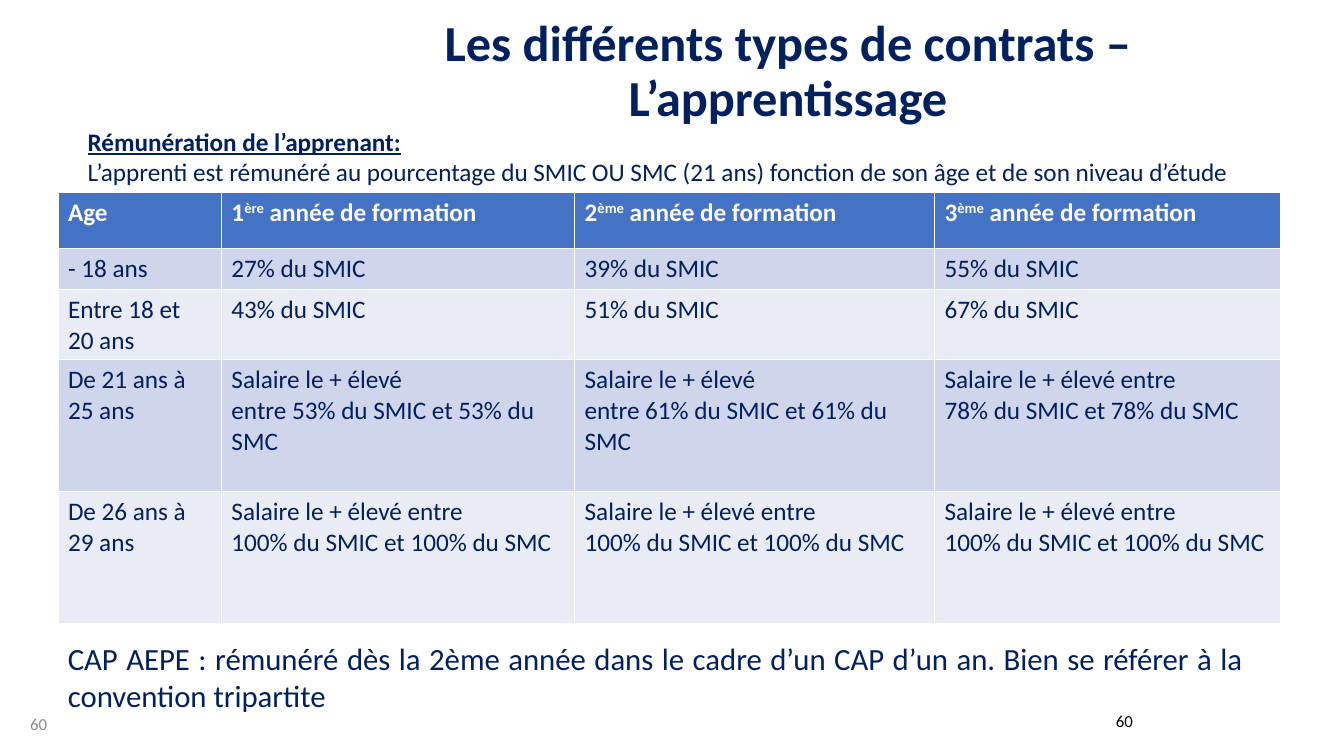
from pptx import Presentation
from pptx.dml.color import RGBColor
from pptx.enum.text import MSO_ANCHOR, MSO_AUTO_SIZE, PP_ALIGN
from pptx.util import Cm, Pt

# Content
TITLE = "Les différents types de contrats – L’apprentissage"
INTRO = [
    "Rémunération de l’apprenant:",
    "L’apprenti est rémunéré au pourcentage du SMIC OU SMC (21 ans) "
    "fonction de son âge et de son niveau d’étude",
]
NOTE = ("CAP AEPE : rémunéré dès la 2ème année dans le cadre d’un CAP d’un an. "
        "Bien se référer à la convention tripartite")
PAGE = "60"
YEARS = [("1", "ère"), ("2", "ème"), ("3", "ème")]
FULL_PAY = "Salaire le + élevé entre\n100% du SMIC et 100% du SMC"
PAY = [
    ("- 18 ans", "27% du SMIC", "39% du SMIC", "55% du SMIC"),
    ("Entre 18 et 20 ans", "43% du SMIC", "51% du SMIC", "67% du SMIC"),
    ("De 21 ans à 25 ans",
     "Salaire le + élevé\nentre 53% du SMIC et 53% du SMC",
     "Salaire le + élevé\nentre 61% du SMIC et 61% du SMC",
     "Salaire le + élevé entre\n78% du SMIC et 78% du SMC"),
    ("De 26 ans à 29 ans", FULL_PAY, FULL_PAY, FULL_PAY),
]
COL_WIDTHS = [4.12, 8.9, 9.07, 8.71]
ROW_HEIGHTS = [1.42, 1.03, 1.75, 3.31, 3.33]
COLORS = {"navy": "002060", "white": "FFFFFF", "black": "000000", "gray": "8C8C8C",
          "header": "4472C4", "odd": "CFD5EA", "even": "E9EBF5"}
FONT = "Calibri"


def rgb(name):
    return RGBColor.from_string(COLORS[name])


def style(p, size, color, align=None, bold=False):
    p.alignment = align
    p.font.name = FONT
    p.font.size = Pt(size)
    p.font.bold = bold
    p.font.color.rgb = rgb(color)


def add_text(s, box, lines, size, color, align, anchor=MSO_ANCHOR.TOP):
    tf = s.shapes.add_textbox(*map(Cm, box)).text_frame
    tf.word_wrap = True
    tf.vertical_anchor = anchor
    tf.text = "\n".join(lines)
    for p in tf.paragraphs:
        style(p, size, color, align)
    return tf


prs = Presentation()
prs.slide_width, prs.slide_height = Cm(33.87), Cm(19.05)
s = prs.slides.add_slide(prs.slide_layouts[5])

# Title
title = s.shapes.title
title.left, title.top, title.width, title.height = map(Cm, (7.21, 1.07, 25.3, 1.52))
tf = title.text_frame
tf.text = TITLE
tf.word_wrap = True
tf.auto_size = MSO_AUTO_SIZE.NONE
tf.vertical_anchor = MSO_ANCHOR.MIDDLE
style(tf.paragraphs[0], 36, "navy", PP_ALIGN.CENTER, bold=True)
tf.paragraphs[0].line_spacing = 0.9

# Introduction
tf = add_text(s, (1.96, 3.05, 29.97, 1.8), INTRO, 18, "navy", PP_ALIGN.JUSTIFY)
tf.paragraphs[0].font.bold = True
tf.paragraphs[0].font.underline = True

# Pay table
table = s.shapes.add_table(len(ROW_HEIGHTS), len(COL_WIDTHS), Cm(1.46), Cm(4.84),
                           Cm(sum(COL_WIDTHS)), Cm(sum(ROW_HEIGHTS))).table
for col, width in zip(table.columns, COL_WIDTHS):
    col.width = Cm(width)
for row, height in zip(table.rows, ROW_HEIGHTS):
    row.height = Cm(height)

table.cell(0, 0).text = "Age"
for j, (number, suffix) in enumerate(YEARS, 1):
    p = table.cell(0, j).text_frame.paragraphs[0]
    for text in (number, suffix, " année de formation"):
        r = p.add_run()
        r.text = text
        if text == suffix:
            r._r.get_or_add_rPr().set("baseline", "30000")
for i, values in enumerate(PAY, 1):
    for j, value in enumerate(values):
        table.cell(i, j).text = value

for i, row in enumerate(table.rows):
    fill = "header" if i == 0 else "odd" if i % 2 else "even"
    for cell in row.cells:
        cell.fill.solid()
        cell.fill.fore_color.rgb = rgb(fill)
        for p in cell.text_frame.paragraphs:
            style(p, 18, "navy" if i else "white", bold=i == 0)

# Closing note and page numbers
add_text(s, (1.46, 16, 30.12, 2.13), [NOTE], 22, "navy", PP_ALIGN.JUSTIFY)
for box, color in [((27.2, 17.65, 1.6, 1.02), "black"), ((0.2, 17.73, 1.24, 1.02), "gray")]:
    add_text(s, box, [PAGE], 12, color, PP_ALIGN.RIGHT, MSO_ANCHOR.MIDDLE)

prs.save("out.pptx")
